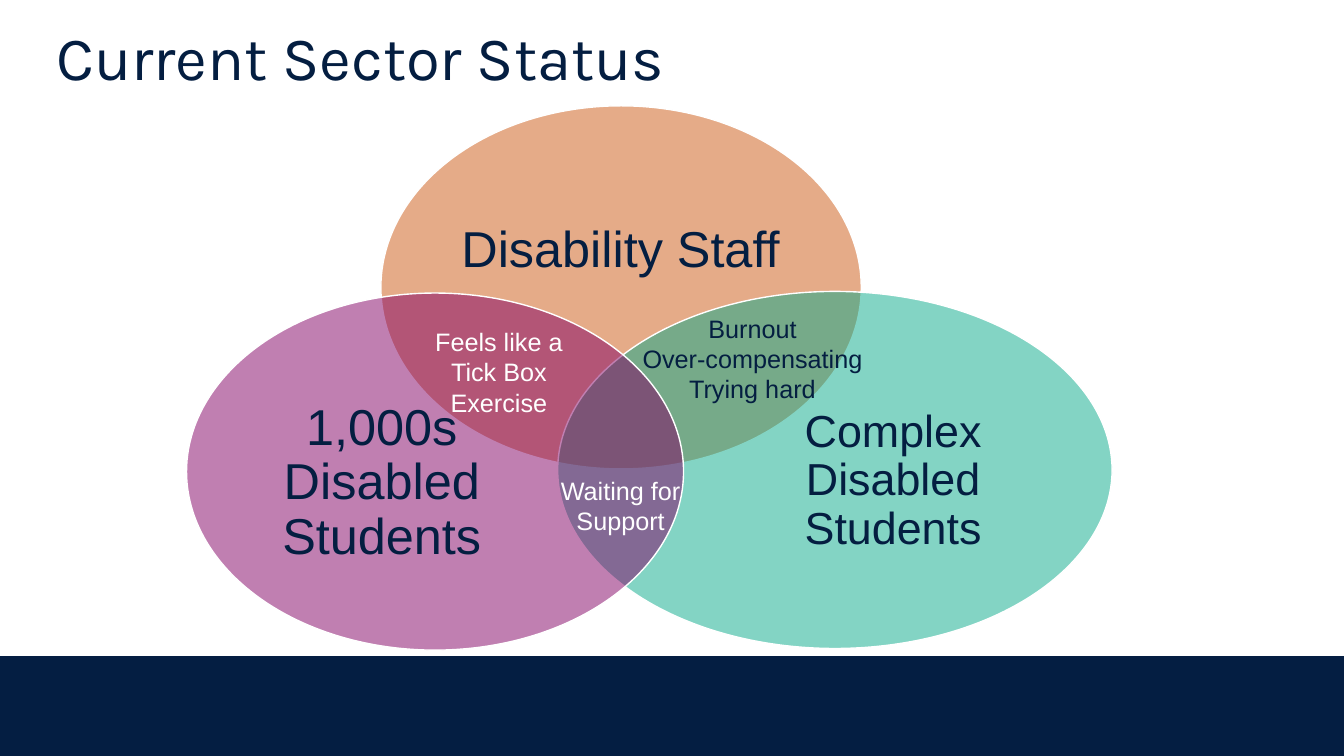
from pptx import Presentation
from pptx.dml.color import RGBColor
from pptx.enum.shapes import MSO_SHAPE
from pptx.enum.text import MSO_ANCHOR, PP_ALIGN
from pptx.oxml.ns import qn
from pptx.util import Inches, Pt
from lxml import etree

RECT, OVAL = MSO_SHAPE.RECTANGLE, MSO_SHAPE.OVAL
TOP, MIDDLE = MSO_ANCHOR.TOP, MSO_ANCHOR.MIDDLE
LEFT, CENTER = PP_ALIGN.LEFT, PP_ALIGN.CENTER

NAVY = RGBColor(0x04, 0x1E, 0x41)
BAND = RGBColor(0x04, 0x1E, 0x42)
WHITE = RGBColor(0xFF, 0xFF, 0xFF)
ORANGE = RGBColor(0xCD, 0x59, 0x13)
TEAL = RGBColor(0x08, 0xAA, 0x8A)
PURPLE = RGBColor(0x83, 0x00, 0x65)

WIDE, HIGH = 13.33, 7.5

# Ovals and labels: left, top, width, height as shares of the diagram box
SETS = [
    ("Disability Staff", 36, ORANGE,
     (0.21, 0, 0.519, 0.667), (0.279, 0.117, 0.38, 0.3)),
    ("Complex Disabled Students", 32, TEAL,
     (0.401, 0.341, 0.599, 0.656), (0.584, 0.509, 0.359, 0.361)),
    ("1,000s Disabled Students", 36, PURPLE,
     (0, 0.344, 0.537, 0.656), (0.05, 0.513, 0.322, 0.361)),
]
OVERLAPS = [
    ("Feels like a Tick Box Exercise", WHITE, (0.246, 0.396, 0.183, 0.187)),
    ("Burnout\nOver-compensating\nTrying hard", NAVY,
     (0.48, 0.372, 0.263, 0.187)),
    ("Waiting for Support", WHITE, (0.389, 0.669, 0.16, 0.131)),
]


def within(box, share):
    """Turn shares of a box into a box in inches."""
    x, y, w, h = box
    return (x + share[0] * w, y + share[1] * h, share[2] * w, share[3] * h)


def emu(box):
    return [Inches(side) for side in box]


def write(frame, text, size, color=NAVY, font="Arial", align=CENTER,
          anchor=TOP, pad=(0, 0), line=None):
    """Fill a text frame, one paragraph for each line of text."""
    frame.word_wrap = True
    frame.vertical_anchor = anchor
    frame.margin_left = frame.margin_right = Inches(pad[0])
    frame.margin_top = frame.margin_bottom = Inches(pad[1])
    frame.text = text
    for para in frame.paragraphs:
        para.alignment = align
        if line:
            para.line_spacing = line
        para.font.name = font
        para.font.size = Pt(size)
        para.font.color.rgb = color


def paint(slide, kind, box, color, alpha=None, edge=None):
    """Add a filled shape with optional transparency and outline."""
    shape = slide.shapes.add_shape(kind, *emu(box))
    shape.shadow.inherit = False
    shape.fill.solid()
    shape.fill.fore_color.rgb = color
    if alpha:
        tint = shape._element.spPr.find(qn("a:solidFill"))[0]
        etree.SubElement(tint, qn("a:alpha"), val=str(alpha * 1000))
    if edge:
        shape.line.color.rgb = edge
        shape.line.width = Pt(1)
    else:
        shape.line.fill.background()


def label(slide, box, text, size, **style):
    frame = slide.shapes.add_textbox(*emu(box)).text_frame
    write(frame, text, size, **style)


def header(slide, box):
    title = slide.shapes.title
    title.left, title.top, title.width, title.height = emu(box)
    write(title.text_frame, "Current Sector Status", 44, font="Karla",
          align=LEFT, anchor=MIDDLE, line=0.9)


def venn(slide, box):
    # Main sets
    for text, size, color, oval, spot in SETS:
        paint(slide, OVAL, within(box, oval), color, alpha=50, edge=WHITE)
        label(slide, within(box, spot), text, size, anchor=MIDDLE, line=0.9)
    # Notes where sets overlap
    for text, color, spot in OVERLAPS:
        label(slide, within(box, spot), text, 18, color=color,
              pad=(0.1, 0.05))


def main():
    deck = Presentation()
    deck.slide_width, deck.slide_height = Inches(WIDE), Inches(HIGH)
    slide = deck.slides.add_slide(deck.slide_layouts[5])
    page = (0, 0, WIDE, HIGH)
    paint(slide, RECT, within(page, (0, 0.868, 1, 0.132)), BAND)
    header(slide, within(page, (0.042, 0.029, 0.915, 0.103)))
    venn(slide, (1.85, 1.05, 9.18, 5.4))
    deck.save("out.pptx")


if __name__ == "__main__":
    main()
